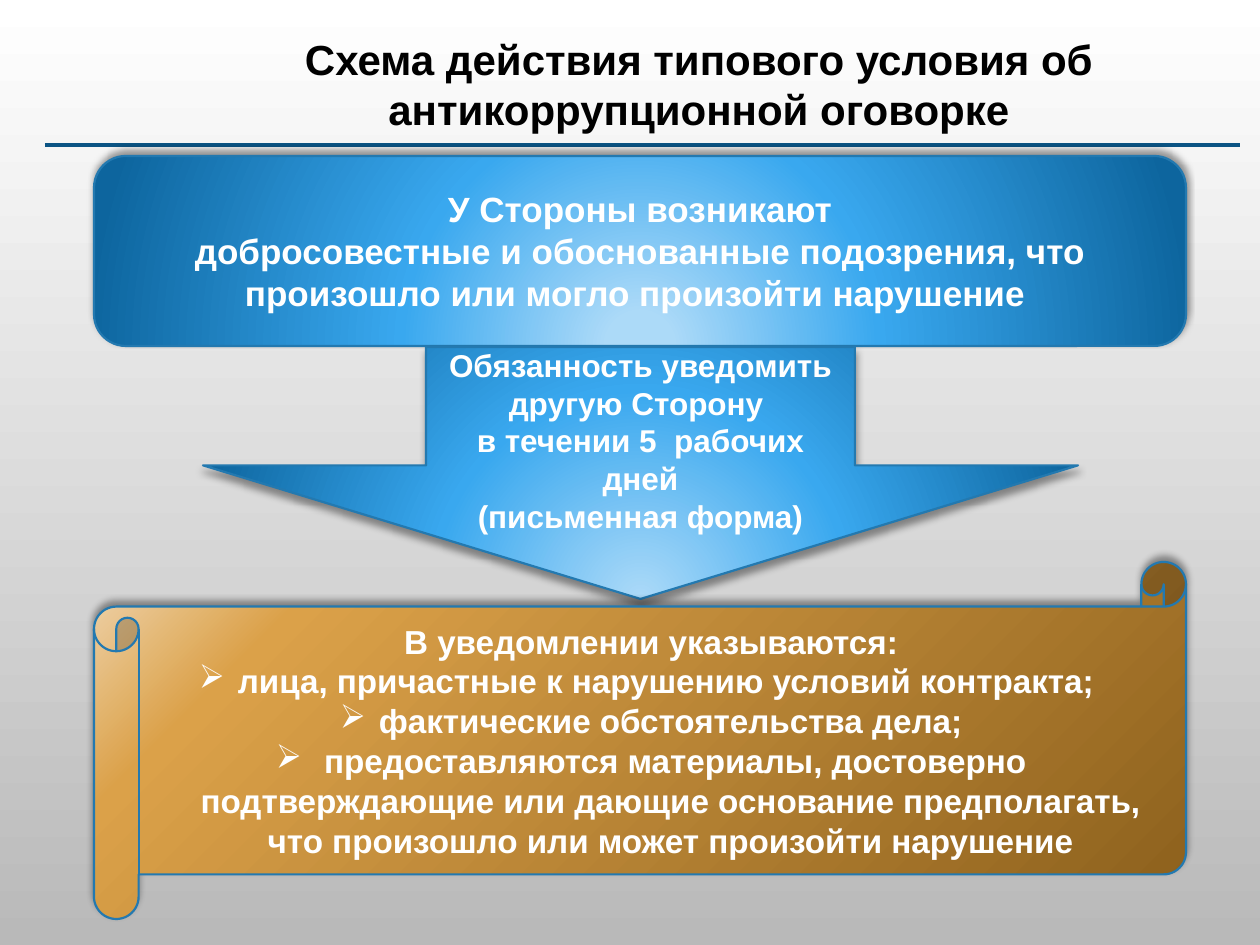
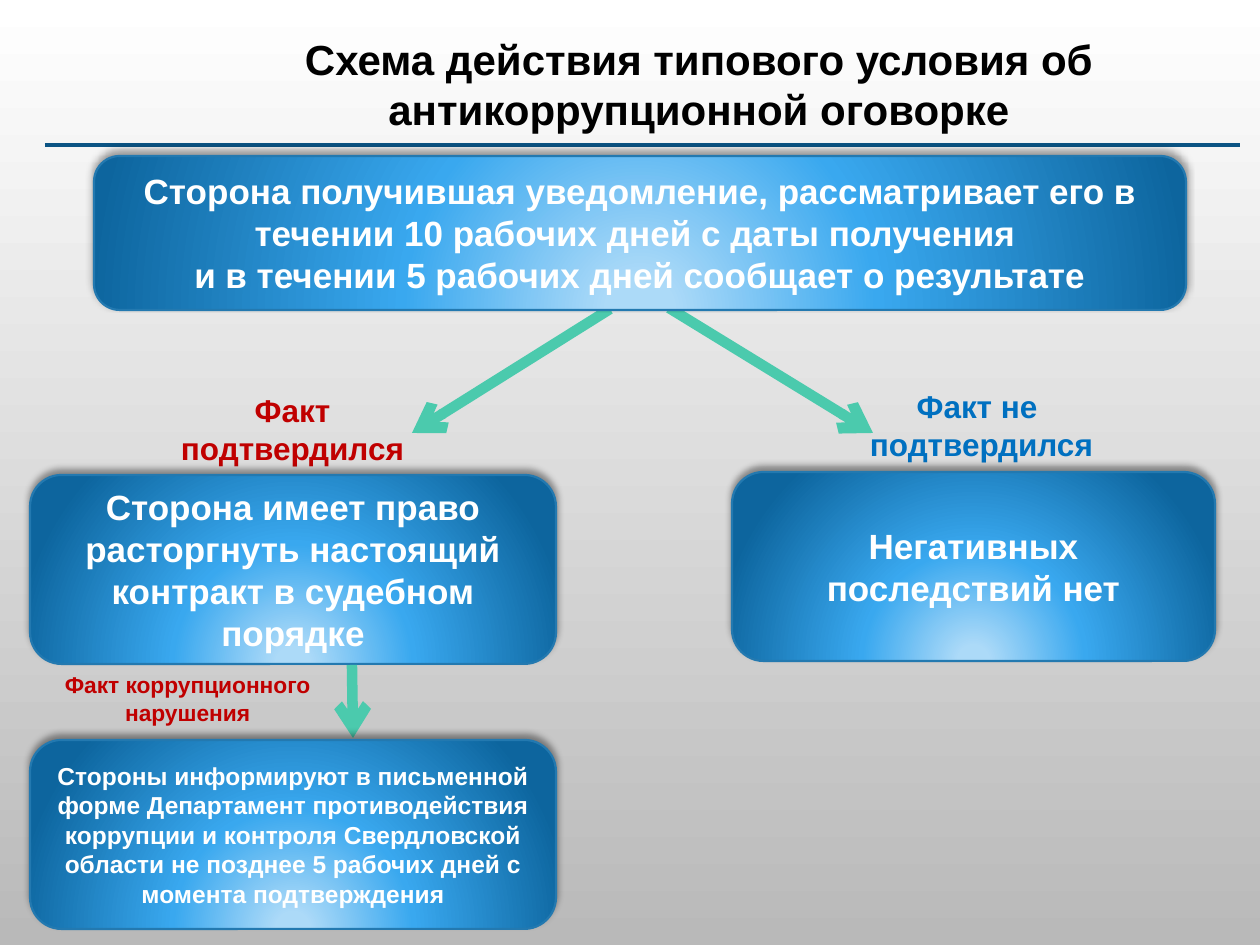
from lxml import etree
from pptx import Presentation
from pptx.dml.color import RGBColor
from pptx.enum.shapes import MSO_CONNECTOR, MSO_SHAPE as SHAPE
from pptx.enum.text import MSO_ANCHOR as ANCHOR, PP_ALIGN as ALIGN
from pptx.oxml import parse_xml
from pptx.oxml.ns import nsdecls, qn
from pptx.util import Pt

PX = 914400 / 126
FONT = "Arial"
WHITE, BLACK = "FFFFFF", "000000"
RED, BLUE = "C00000", "0070C0"
RULE, OUTLINE, ARROW = "0B5484", "2379B0", "4BCAAD"
BLUE_BOX = [(6, "ACDAF8"), (43, "39A8EF"), (100, "0D659E")]
BLUE_ARROW = [(0, "ACDAF8"), (46, "39A8EF"), (100, "0D659E")]
GOLD = [(0, "F0D7B2"), (17, "DBA149"), (100, "8C601C")]
GLOW = ('<a:path path="circle">'
        '<a:fillToRect l="50000" t="130000" r="50000" b="-30000"/></a:path>')
DIAGONAL = '<a:lin ang="2700000" scaled="0"/>'
TITLE = "Схема действия типового условия об антикоррупционной оговорке"


def px(*values):
    return [round(v * PX) for v in values]


def rgb(code):
    return RGBColor.from_string(code)


def add_bullet(p, char):
    indent = px(39)[0]
    pPr = p._p.get_or_add_pPr()
    pPr.set("marL", str(indent))
    pPr.set("indent", str(-indent))
    etree.SubElement(pPr, qn("a:buChar")).set("char", char)


def write(sp, lines, size=20, color=WHITE, anchor=ANCHOR.MIDDLE, bullet_from=None):
    tf = sp.text_frame
    tf.word_wrap = True
    tf.vertical_anchor = anchor
    for i, line in enumerate(lines):
        p = tf.paragraphs[0] if i == 0 else tf.add_paragraph()
        p.alignment = ALIGN.CENTER
        if bullet_from is not None and i >= bullet_from:
            add_bullet(p, "➢")
        r = p.add_run()
        r.text = line
        r.font.name, r.font.size, r.font.bold = FONT, Pt(size), True
        r.font.color.rgb = rgb(color)


def add_label(slide, box, *lines, size=18, color=BLACK):
    sp = slide.shapes.add_textbox(*px(*box))
    write(sp, lines, size=size, color=color, anchor=ANCHOR.TOP)


def set_gradient(sp, stops, direction):
    gs = "".join(f'<a:gs pos="{pos * 1000}"><a:srgbClr val="{code}"/></a:gs>'
                 for pos, code in stops)
    sp._element.spPr.find(qn("a:prstGeom")).addnext(parse_xml(
        f'<a:gradFill {nsdecls("a")} rotWithShape="1">'
        f'<a:gsLst>{gs}</a:gsLst>{direction}</a:gradFill>'))


def set_shadow(sp, angle):
    sp.shadow.inherit = False
    effects = sp._element.spPr.find(qn("a:effectLst"))
    effects.append(parse_xml(
        f'<a:outerShdw {nsdecls("a")} blurRad="{Pt(4)}" dist="{Pt(3)}" '
        f'dir="{angle * 60000}" rotWithShape="0"><a:srgbClr val="{BLACK}">'
        '<a:alpha val="40000"/></a:srgbClr></a:outerShdw>'))


def add_block(slide, box, *lines, kind=SHAPE.ROUNDED_RECTANGLE, stops=BLUE_BOX,
              direction=GLOW, shadow_angle=270, adjust=(), **text_format):
    sp = slide.shapes.add_shape(kind, *px(*box))
    for i, value in enumerate(adjust):
        sp.adjustments[i] = value
    set_gradient(sp, stops, direction)
    sp.line.color.rgb = rgb(OUTLINE)
    sp.line.width = Pt(1.25)
    set_shadow(sp, shadow_angle)
    write(sp, lines, **text_format)


def add_line(slide, start, end, color, width, arrow=False):
    cxn = slide.shapes.add_connector(MSO_CONNECTOR.STRAIGHT, *px(*start, *end))
    cxn.line.color.rgb = rgb(color)
    cxn.line.width = Pt(width)
    if arrow:
        ln = cxn.line._get_or_add_ln()
        etree.SubElement(ln, qn("a:tailEnd")).set("type", "arrow")
    etree.SubElement(cxn._element.spPr, qn("a:effectLst"))


def add_arrow(slide, start, end):
    add_line(slide, start, end, ARROW, 6, arrow=True)


def add_slide(prs):
    slide = prs.slides.add_slide(prs.slide_layouts[6])
    fill = slide.background.fill
    fill.gradient()
    fill.gradient_angle = 270
    for stop, pos, code in zip(fill.gradient_stops, (0, 1), (WHITE, "B9B9B9")):
        stop.position = pos
        stop.color.rgb = rgb(code)
    add_line(slide, (45, 145), (1240, 145), RULE, 2)
    add_label(slide, (213, 27, 972, 165), TITLE, size=24)
    return slide


def build_notice(prs):
    slide = add_slide(prs)
    add_block(slide, (94, 156, 1092, 190),
              "У Стороны возникают",
              "добросовестные и обоснованные подозрения, что произошло "
              "или могло произойти нарушение ")
    add_block(slide, (203, 347, 875, 252),
              "Обязанность уведомить другую Сторону ",
              "в течении 5  рабочих дней",
              "(письменная форма)",
              kind=SHAPE.DOWN_ARROW, stops=BLUE_ARROW, shadow_angle=90,
              adjust=(0.49, 0.53), size=18)
    add_block(slide, (94, 562, 1092, 357),
              "В уведомлении указываются:",
              "лица, причастные к нарушению условий контракта; ",
              "фактические обстоятельства дела;",
              " предоставляются материалы, достоверно подтверждающие или дающие "
              "основание предполагать, что произошло или может произойти нарушение",
              kind=SHAPE.HORIZONTAL_SCROLL, stops=GOLD, direction=DIAGONAL,
              size=19, bullet_from=1)


def build_outcome(prs):
    slide = add_slide(prs)
    add_arrow(slide, (669, 308), (873, 433))
    add_arrow(slide, (610, 309), (412, 433))
    add_block(slide, (94, 156, 1092, 154),
              "Сторона получившая уведомление, рассматривает его "
              "в течении 10 рабочих дней с даты получения ",
              "и в течении 5 рабочих дней сообщает о результате")

    add_label(slide, (149, 385, 287, 89), "Факт подтвердился", color=RED)
    add_block(slide, (30, 475, 526, 189),
              "Сторона имеет право расторгнуть настоящий контракт в судебном порядке")
    add_label(slide, (838, 381, 287, 89), "Факт не ", "подтвердился", color=BLUE)
    add_block(slide, (732, 472, 483, 189), "Негативных последствий нет")

    add_arrow(slide, (352, 665), (353, 738))
    add_label(slide, (44, 665, 287, 68), "Факт коррупционного нарушения",
              size=13, color=RED)
    add_block(slide, (30, 740, 526, 189),
              "Стороны информируют в письменной форме Департамент "
              "противодействия коррупции и контроля Свердловской области "
              "не позднее 5 рабочих дней с момента подтверждения",
              size=14)


def main():
    prs = Presentation()
    prs.slide_width, prs.slide_height = px(1260, 945)
    build_notice(prs)
    build_outcome(prs)
    prs.save("out.pptx")


if __name__ == "__main__":
    main()
